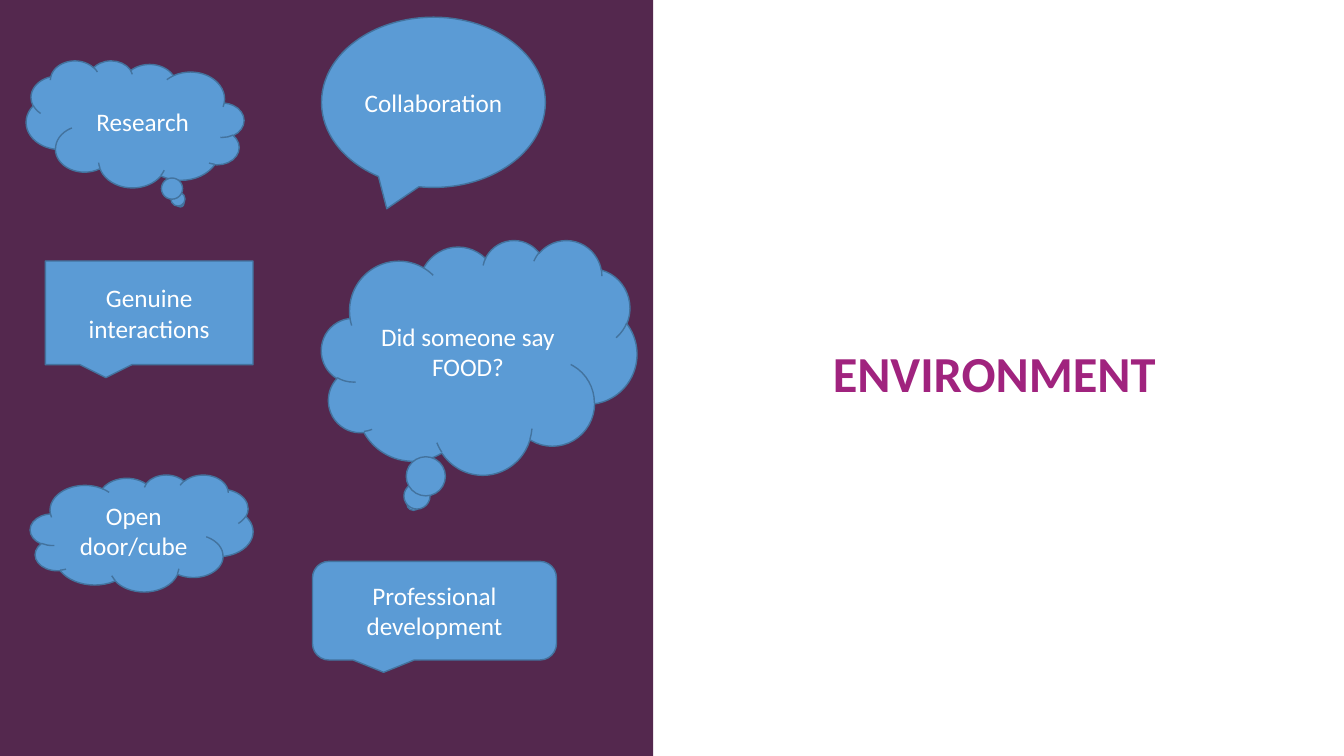
from pptx import Presentation
from pptx import util as u
from pptx.dml import color
from pptx.enum import shapes, text

COLORS = {
    "panel": "54284E",
    "heading": "A0237E",
    "bubble": "5B9BD5",
    "outline": "43739E",
    "bubble_text": "FFFFFF",
}
CELL = u.Inches(13.33) / 64
SHAPE = shapes.MSO_SHAPE
CENTER = text.PP_ALIGN.CENTER
BUBBLE_FONT = {"name": "Calibri", "size": u.Pt(18), "bold": False}
HEADING_FONT = {"name": "Calibri", "size": u.Pt(36), "bold": True}

BUBBLES = [
    ("Genuine interactions", SHAPE.RECTANGULAR_CALLOUT, (2.16, 12.43, 9.89, 4.94), False),
    ("Professional development", SHAPE.ROUNDED_RECTANGULAR_CALLOUT, (14.88, 26.74, 11.62, 4.7), False),
    ("Collaboration", SHAPE.OVAL_CALLOUT, (15.31, 0.82, 10.66, 8.11), False),
    ("Did someone say FOOD?", SHAPE.CLOUD_CALLOUT, (15.31, 11.42, 15.02, 11.18), False),
    ("Research", SHAPE.CLOUD_CALLOUT, (1.25, 2.88, 10.37, 6.05), True),
    ("Open door/cube", SHAPE.CLOUD, (1.44, 22.61, 10.61, 5.57), False),
]


def rgb(name):
    return color.RGBColor.from_string(COLORS[name])


def on_grid(cells):
    return [u.Emu(round(cell * CELL)) for cell in cells]


def assign(target, values):
    for name, value in values.items():
        setattr(target, name, value)


def write(box, words, font, color_name, anchor, paragraph):
    frame = box.text_frame
    assign(frame, {"word_wrap": True, "auto_size": text.MSO_AUTO_SIZE.NONE, "vertical_anchor": anchor})
    para = frame.paragraphs[0]
    assign(para, paragraph)
    span = para.add_run()
    span.text = words
    assign(span.font, font)
    span.font.color.rgb = rgb(color_name)


def add_filled(page, kind, cells, fill):
    shape = page.shapes.add_shape(kind, *on_grid(cells))
    shape.shadow.inherit = False
    shape.fill.solid()
    shape.fill.fore_color.rgb = rgb(fill)
    return shape


def add_panel(page):
    panel = add_filled(page, SHAPE.RECTANGLE, (0, 0, 31.1, 36), "panel")
    panel.line.fill.background()
    page.shapes.element.insert(2, panel.element)


def add_heading(page):
    page.shapes.title.element.getparent().remove(page.shapes.title.element)
    heading = page.placeholders[1]
    bounds = on_grid((34.37, 16.37, 26.5, 3.31))
    assign(heading, dict(zip(("left", "top", "width", "height"), bounds)))
    write(heading, "ENVIRONMENT ", HEADING_FONT, "heading", text.MSO_ANCHOR.TOP,
          {"alignment": CENTER, "line_spacing": 0.9, "space_before": u.Pt(0)})


def add_bubble(page, words, kind, cells, flipped):
    bubble = add_filled(page, kind, cells, "bubble")
    bubble.line.color.rgb = rgb("outline")
    bubble.line.width = u.Pt(1)
    if flipped:
        bubble.element.spPr.xfrm.set("flipH", "1")
    write(bubble, words, BUBBLE_FONT, "bubble_text", text.MSO_ANCHOR.MIDDLE,
          {"alignment": CENTER})


def main():
    deck = Presentation()
    assign(deck, {"slide_width": u.Inches(13.33), "slide_height": u.Inches(7.5)})
    page = deck.slides.add_slide(deck.slide_layouts[2])
    add_panel(page)
    add_heading(page)
    for bubble in BUBBLES:
        add_bubble(page, *bubble)
    deck.save("out.pptx")


if __name__ == "__main__":
    main()
